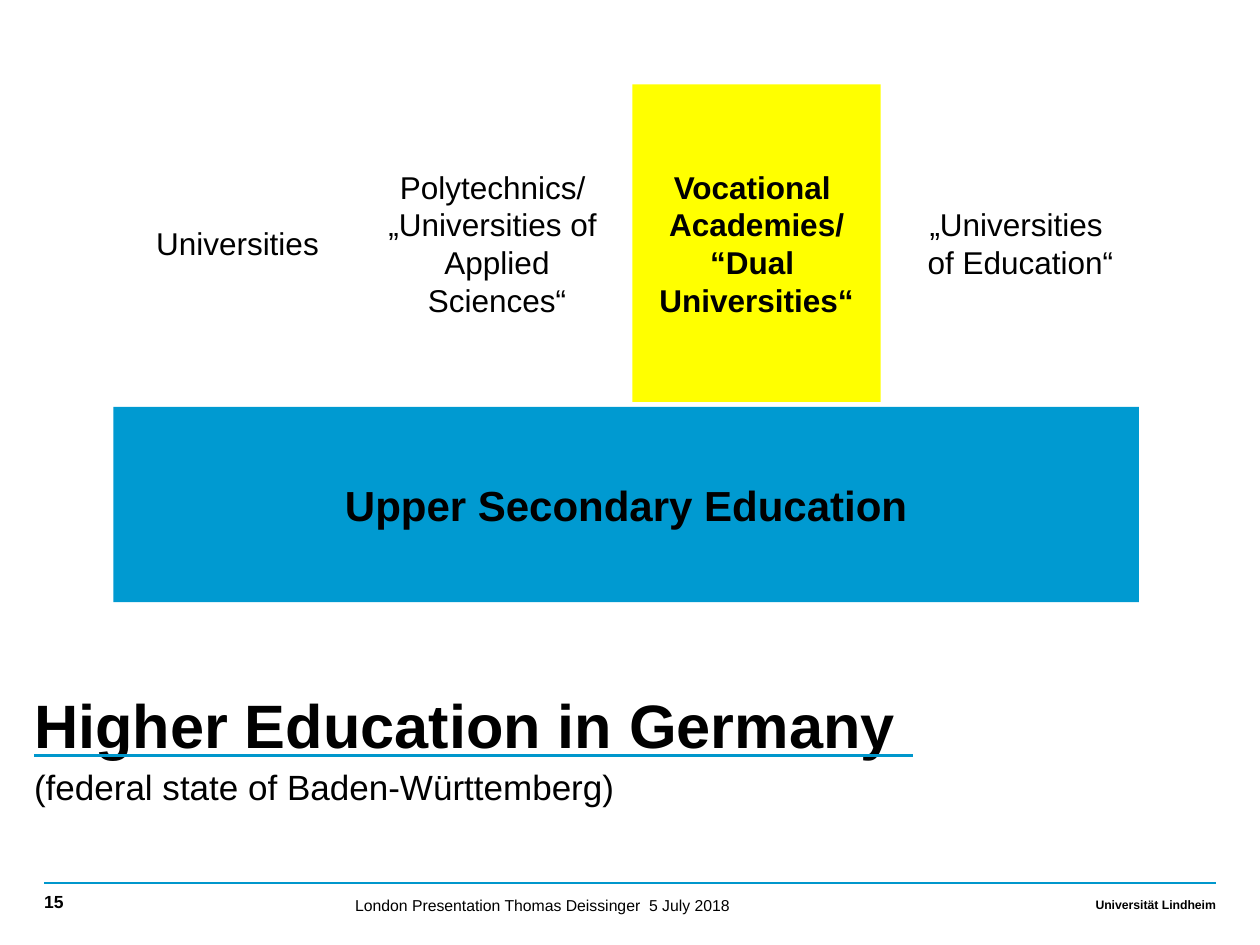
import pptx
import pptx.dml.color
import pptx.enum.shapes
import pptx.enum.text
import pptx.oxml
import pptx.util
from pptx.util import Inches

ANCHOR = pptx.enum.text.MSO_ANCHOR
ALIGN = pptx.enum.text.PP_ALIGN
NS = 'xmlns:a="http://schemas.openxmlformats.org/drawingml/2006/main"'


def color(value):
    return pptx.dml.color.RGBColor.from_string(value)


def add_text(p, text, size, bold=False):
    """Add one run per line, with line breaks between them; return the last run."""
    for i, line in enumerate(text.split("\n")):
        if i:
            p.add_line_break()
        r = p.add_run()
        r.text = line
        r.font.name = "Arial"
        r.font.size = pptx.util.Pt(size)
        r.font.bold = bold
        r.font.color.rgb = color("000000")
    return r


prs = pptx.Presentation()
prs.slide_width, prs.slide_height = Inches(10), Inches(7.5)
s = prs.slides.add_slide(prs.slide_layouts[6])

# Footer
rule = s.shapes.add_connector(pptx.enum.shapes.MSO_CONNECTOR.STRAIGHT,
                              Inches(0.35), Inches(7.01), Inches(9.65), Inches(7.01))
rule.line.color.rgb = color("0097CC")
rule.line.width = pptx.util.Pt(1)
rule._element.spPr.append(pptx.oxml.parse_xml(f"<a:effectLst {NS}/>"))

for text, left, width, size, align in [
    ("Universität Lindheim", 6.26, 3.39, 7, ALIGN.RIGHT),
    ("15", 0.35, 1.02, 10, ALIGN.LEFT),
]:
    sp = s.shapes.add_textbox(Inches(left), Inches(7.06), Inches(width), Inches(0.24))
    tf = sp.text_frame
    tf.word_wrap = True
    tf.vertical_anchor = ANCHOR.BOTTOM
    tf.margin_left = tf.margin_right = tf.margin_top = 0
    tf.margin_bottom = Inches(0.06)
    tf.paragraphs[0].alignment = align
    add_text(tf.paragraphs[0], text, size, True)

sp = s.shapes.add_textbox(Inches(2.72), Inches(7.06), Inches(4.65), Inches(0.24))
sp.text_frame.word_wrap = True
add_text(sp.text_frame.paragraphs[0], "London Presentation Thomas Deissinger  5 July 2018", 9)

# Title with blue underline, and subtitle
sp = s.shapes.add_textbox(Inches(0.27), Inches(5.4), Inches(9.92), Inches(0.94))
tf = sp.text_frame
tf.word_wrap = True
tf.margin_left = tf.margin_right = tf.margin_top = tf.margin_bottom = 0
title, subtitle = tf.paragraphs[0], tf.add_paragraph()
title.line_spacing = subtitle.line_spacing = 1.1
r = add_text(title, "Higher Education in Germany ", 35, True)
r.font.underline = True
r.font._element.find(pptx.oxml.ns.qn("a:latin")).addprevious(pptx.oxml.parse_xml(
    f'<a:uFill {NS}><a:solidFill><a:srgbClr val="0097CC"/></a:solidFill></a:uFill>'))
add_text(subtitle, "(federal state of Baden-Württemberg)", 20)

# Institutions standing on upper secondary education
COL_W, COL_H, PITCH = 1.97, 2.52, 2.06
columns = [
    ("Universities", None),
    ("Polytechnics/ \n„Universities of \nApplied Sciences“", None),
    ("Vocational \nAcademies/\n“Dual \nUniversities“", "FFFF00"),
    ("„Universities\n of Education“", None),
]
blocks = [(text, 0.9 + i * PITCH, 0.67, COL_W, COL_H, fill, 18)
          for i, (text, fill) in enumerate(columns)]
blocks.append(("Upper Secondary Education", 0.9, 3.23, 8.14, 1.55, "009AD1", 24))

for text, left, top, width, height, fill, size in blocks:
    box = Inches(left), Inches(top), Inches(width), Inches(height)
    if fill:
        sp = s.shapes.add_shape(pptx.enum.shapes.MSO_SHAPE.RECTANGLE, *box)
        sp.shadow.inherit = False
        sp.fill.solid()
        sp.fill.fore_color.rgb = color(fill)
        sp.line.fill.background()
    else:
        sp = s.shapes.add_textbox(*box)
    tf = sp.text_frame
    tf.word_wrap = False
    tf.vertical_anchor = ANCHOR.MIDDLE
    tf.paragraphs[0].alignment = ALIGN.CENTER
    add_text(tf.paragraphs[0], text, size, bool(fill))

prs.save("out.pptx")
